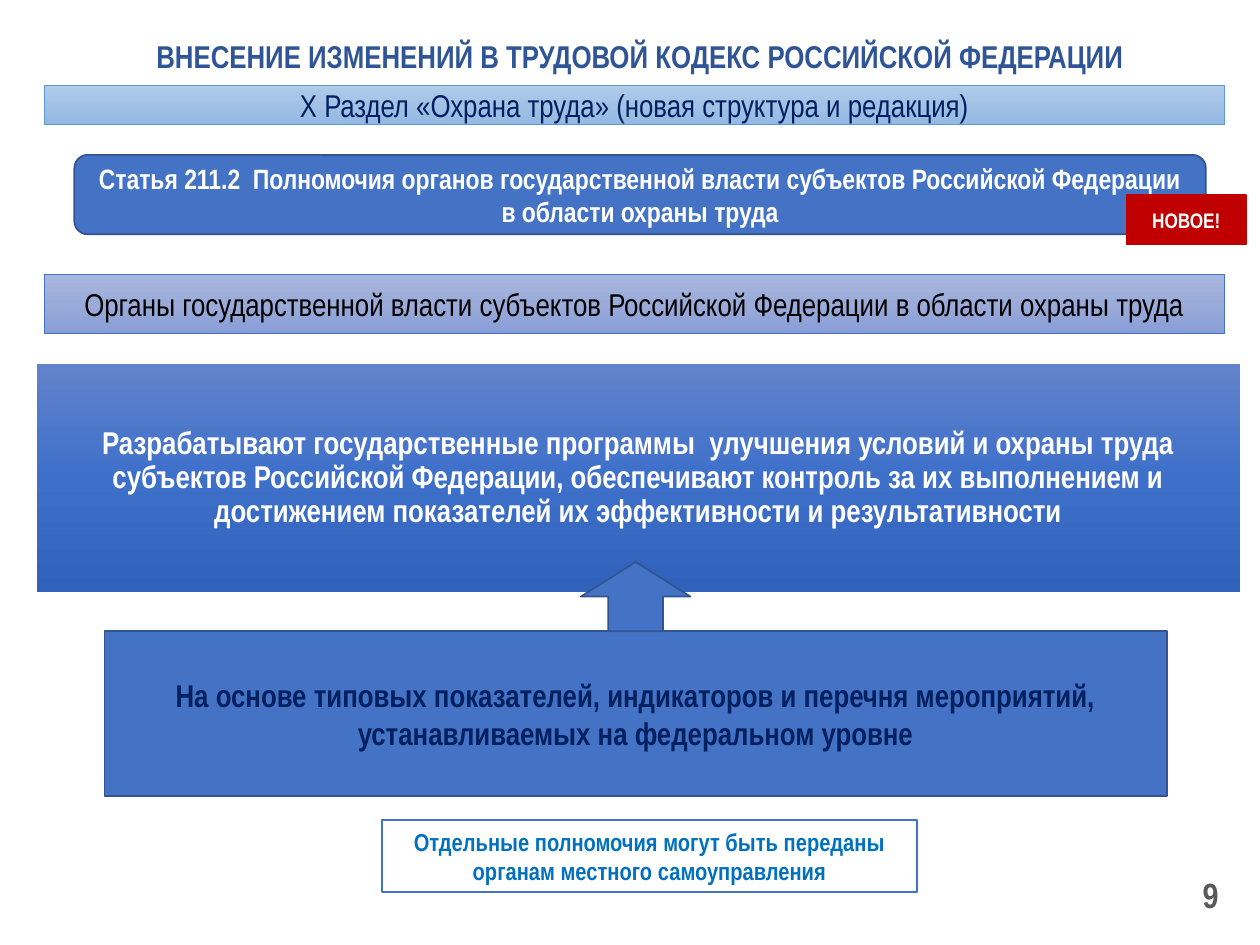
import copy
import pptx
import pptx.util
import pptx.dml.color
import pptx.enum.shapes
import pptx.enum.text
from dataclasses import dataclass


@dataclass(frozen=True)
class Theme:
    font: str = "Arial Narrow"
    blue: str = "4472C4"
    edge: str = "325491"
    sky: str = "5B9BD5"
    navy: str = "002060"
    heading: str = "2F5597"
    accent: str = "0070C0"
    red: str = "C00000"
    gray: str = "595959"
    white: str = "FFFFFF"
    black: str = "000000"
    section_fill: tuple = ("B1CBE9", "A3C1E5", "93B9E4")
    bodies_fill: tuple = ("A8B7DF", "9AABD9", "889ED7")
    duty_fill: tuple = ("6183CB", "3E70CA", "3062BB")
    number: int = 20
    main: int = 18
    article: int = 16
    note: int = 14
    tag: int = 12


theme = Theme()
rgb = pptx.dml.color.RGBColor.from_string
MSO = pptx.enum.shapes.MSO_SHAPE
ALIGN = pptx.enum.text.PP_ALIGN

prs = pptx.Presentation()
prs.slide_width = pptx.util.Inches(10)
prs.slide_height = pptx.util.Inches(7.5)
COL = prs.slide_width / 100
ROW = prs.slide_height / 75
s = prs.slides.add_slide(prs.slide_layouts[5])


def place(left, top, width, height):
    return [round(v) for v in (left * COL, top * ROW, width * COL, height * ROW)]


def write(sp, text, size, color, bold=True, align=ALIGN.CENTER):
    tf = sp.text_frame
    tf.word_wrap = True
    tf.auto_size = pptx.enum.text.MSO_AUTO_SIZE.NONE
    tf.vertical_anchor = pptx.enum.text.MSO_ANCHOR.MIDDLE
    p = tf.paragraphs[0]
    p.alignment = align
    r = p.add_run()
    r.text = text
    r.font.name = theme.font
    r.font.size = pptx.util.Pt(size)
    r.font.bold = bold
    r.font.color.rgb = rgb(color)


title = s.shapes.title
title.left, title.top, title.width, title.height = place(8.3, 1.3, 85, 6.3)
write(title, "ВНЕСЕНИЕ ИЗМЕНЕНИЙ В ТРУДОВОЙ КОДЕКС РОССИЙСКОЙ ФЕДЕРАЦИИ", theme.main, theme.heading)

number = s.shapes.add_textbox(*place(74.4, 69, 23.3, 4))
write(number, "9", theme.number, theme.gray, align=ALIGN.RIGHT)

blocks = [
    ("article", MSO.ROUNDED_RECTANGLE, (5.9, 12.3, 89.8, 6.3), theme.blue, theme.edge, 1,
     "Статья 211.2  Полномочия органов государственной власти субъектов Российской Федерации "
     "в области охраны труда", theme.article, theme.white, True),
    ("bodies", MSO.RECTANGLE, (3.5, 21.8, 93.7, 4.7), theme.bodies_fill, theme.blue, 0.5,
     "Органы государственной власти субъектов Российской Федерации в области охраны труда",
     theme.main, theme.black, False),
    ("duty", MSO.RECTANGLE, (2.9, 28.9, 95.5, 18.1), theme.duty_fill, None, 0,
     "Разрабатывают государственные программы  улучшения условий и охраны труда субъектов "
     "Российской Федерации, обеспечивают контроль за их выполнением и достижением показателей "
     "их эффективности и результативности", theme.main, theme.white, True),
    ("note", MSO.RECTANGLE, (30.3, 65.1, 42.5, 5.7), theme.white, theme.blue, 1,
     "Отдельные полномочия могут быть переданы органам местного самоуправления",
     theme.note, theme.accent, True),
    ("tag", MSO.RECTANGLE, (89.4, 15.5, 9.5, 3.9), theme.red, theme.red, 1,
     "НОВОЕ!", theme.tag, theme.white, True),
    ("section", MSO.RECTANGLE, (3.5, 6.8, 93.7, 3.1), theme.section_fill, theme.sky, 0.5,
     "Х Раздел «Охрана труда» (новая структура и редакция)", theme.main, theme.navy, False),
    ("basis", MSO.RECTANGLE, (8.3, 50.1, 84.3, 13.1), theme.blue, theme.edge, 1,
     "На основе типовых показателей, индикаторов и перечня мероприятий, устанавливаемых "
     "на федеральном уровне", theme.main, theme.navy, True),
    ("arrow", MSO.DOWN_ARROW, (46.1, 44.6, 8.7, 5.5), theme.blue, theme.edge, 1,
     "", theme.main, theme.white, False),
]

shapes = {}
for name, kind, cell, fill, line, weight, text, size, color, bold in blocks:
    sp = shapes[name] = s.shapes.add_shape(kind, *place(*cell))
    sp.shadow.inherit = False
    if isinstance(fill, tuple):
        sp.fill.gradient()
        sp.fill.gradient_angle = 270
        first = sp._element.spPr.find(".//" + pptx.oxml.ns.qn("a:gs"))
        first.addnext(copy.deepcopy(first))
        for stop, shade, position in zip(sp.fill.gradient_stops, fill, (0, 0.5, 1)):
            stop.color.rgb = rgb(shade)
            stop.position = position
    else:
        sp.fill.solid()
        sp.fill.fore_color.rgb = rgb(fill)
    if line:
        sp.line.color.rgb = rgb(line)
        sp.line.width = pptx.util.Pt(weight)
    else:
        sp.line.fill.background()
    if text:
        write(sp, text, size, color, bold)

shapes["arrow"].rotation = 180
tf = shapes["duty"].text_frame
tf.margin_left = tf.margin_right = tf.margin_top = tf.margin_bottom = pptx.util.Inches(0.07)
tf.paragraphs[0].line_spacing = 0.9

prs.save("out.pptx")
